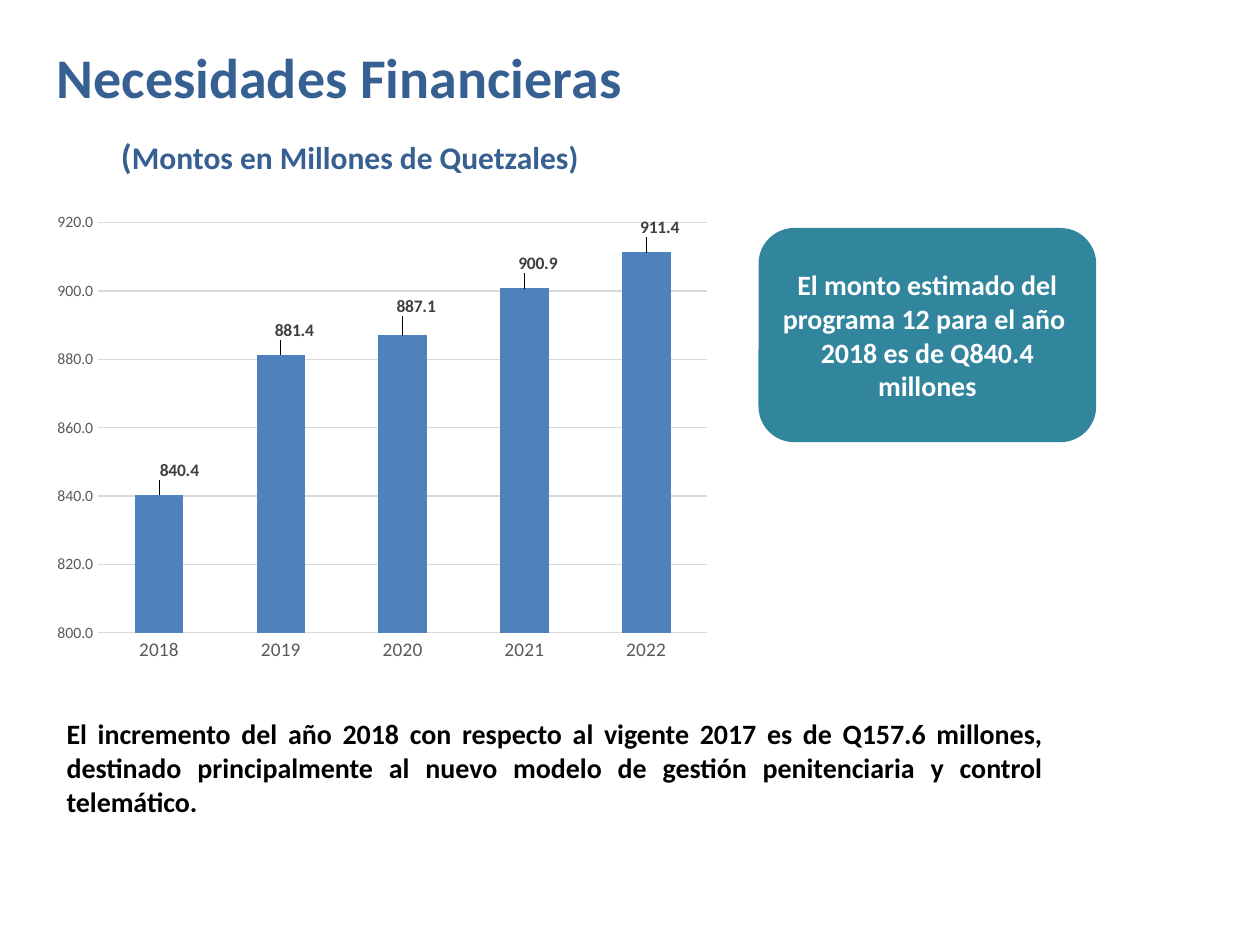
"""Build the financial needs slide with its yearly amounts chart."""
from typing import NamedTuple

import lxml.etree
import pptx
import pptx.chart.data
import pptx.dml.color
import pptx.enum.chart
import pptx.enum.shapes
import pptx.enum.text
import pptx.oxml
import pptx.oxml.ns
import pptx.util

Inches = pptx.util.Inches
Pt = pptx.util.Pt
RGBColor = pptx.dml.color.RGBColor
ALIGN = pptx.enum.text.PP_ALIGN
ANCHOR = pptx.enum.text.MSO_ANCHOR
NAVY = RGBColor(0x37, 0x60, 0x92)
TEAL = RGBColor(0x31, 0x85, 0x9C)
BLUE = RGBColor(0x4F, 0x81, 0xBD)
BLACK = RGBColor(0, 0, 0)
WHITE = RGBColor(0xFF, 0xFF, 0xFF)
DARK = RGBColor(0x40, 0x40, 0x40)
GRAY = RGBColor(0x59, 0x59, 0x59)
LIGHT = RGBColor(0xD9, 0xD9, 0xD9)
FONT = "Calibri"


class Amount(NamedTuple):
    year: str
    value: float
    dx: float
    dy: float


AMOUNTS = [
    Amount("2018", 840.4, 0.03, -0.02),
    Amount("2019", 881.4, 0.02, -0.02),
    Amount("2020", 887.1, 0.02, -0.03),
    Amount("2021", 900.9, 0.02, -0.02),
    Amount("2022", 911.4, 0.02, -0.02),
]


def style(font, size: float, color: RGBColor, bold: bool = False) -> None:
    font.name = FONT
    font.size = Pt(size)
    font.bold = bold
    font.color.rgb = color


def add_run(p, text: str, size: float, color: RGBColor) -> None:
    r = p.add_run()
    r.text = text
    style(r.font, size, color, True)


def make_layout(**values) -> lxml.etree._Element:
    items = "".join(f'<c:{k} val="{v}"/>' for k, v in values.items())
    ns = pptx.oxml.ns.nsdecls("c")
    return pptx.oxml.parse_xml(
        f"<c:layout {ns}><c:manualLayout>{items}</c:manualLayout></c:layout>")


def add_title(s) -> None:
    sp = s.shapes.title
    sp.left, sp.top, sp.width, sp.height = map(Inches, (0.35, 0.21, 5.21, 1.32))
    tf = sp.text_frame
    tf.auto_size = pptx.enum.text.MSO_AUTO_SIZE.NONE
    tf.vertical_anchor = ANCHOR.MIDDLE
    p = tf.paragraphs[0]
    p.alignment = ALIGN.LEFT
    add_run(p, "Necesidades Financieras", 32, NAVY)
    p = tf.add_paragraph()
    p.alignment = ALIGN.LEFT
    p.space_before = Pt(14)
    p._p.get_or_add_pPr().set("marL", str(Inches(0.51)))
    add_run(p, "(", 20, NAVY)
    add_run(p, "Montos en Millones de Quetzales)", 18, NAVY)


def add_note(s) -> None:
    sp = s.shapes.add_textbox(*map(Inches, (0.43, 5.64, 7.95, 0.91)))
    tf = sp.text_frame
    tf.word_wrap = True
    p = tf.paragraphs[0]
    p.alignment = ALIGN.JUSTIFY
    add_run(p, "El incremento del año 2018 con respecto al vigente 2017 es de "
            "Q157.6 millones, destinado principalmente al nuevo modelo de "
            "gestión penitenciaria y control telemático.", 16, BLACK)


def add_callout(s) -> None:
    sp = s.shapes.add_shape(pptx.enum.shapes.MSO_SHAPE.ROUNDED_RECTANGLE,
                            *map(Inches, (6.02, 1.81, 2.68, 1.7)))
    sp.shadow.inherit = False
    sp.fill.solid()
    sp.fill.fore_color.rgb = TEAL
    sp.line.fill.background()
    tf = sp.text_frame
    tf.word_wrap = True
    tf.vertical_anchor = ANCHOR.MIDDLE
    lines = ("El monto estimado del programa 12 para el año ",
             "2018 es de Q840.4 millones")
    for i, text in enumerate(lines):
        p = tf.add_paragraph() if i else tf.paragraphs[0]
        p.alignment = ALIGN.CENTER
        add_run(p, text, 16, WHITE)


def style_axis(axis, size: float) -> None:
    axis.major_tick_mark = pptx.enum.chart.XL_TICK_MARK.NONE
    axis.minor_tick_mark = pptx.enum.chart.XL_TICK_MARK.NONE
    axis.format.line.fill.background()
    style(axis.tick_labels.font, size, GRAY)


def add_amounts_chart(s) -> None:
    data = pptx.chart.data.CategoryChartData(number_format="0.0")
    data.categories = [a.year for a in AMOUNTS]
    data.add_series("Series 1", [a.value for a in AMOUNTS])
    chart = s.shapes.add_chart(pptx.enum.chart.XL_CHART_TYPE.COLUMN_CLUSTERED,
                               *map(Inches, (0.35, 1.62, 5.37, 3.7)), data).chart
    style(chart.font, 10, BLACK)
    chart.has_legend = False
    chart.has_title = False
    style_axis(chart.category_axis, 11)
    axis = chart.value_axis
    style_axis(axis, 9)
    axis.minimum_scale, axis.maximum_scale, axis.major_unit = 800, 920, 20
    axis.tick_labels.number_format = "0.0"
    axis.tick_labels.number_format_is_linked = False
    axis.major_gridlines.format.line.color.rgb = LIGHT
    axis.major_gridlines.format.line.width = Pt(0.75)

    plot = chart.plots[0]
    plot.gap_width = 150
    plot.vary_by_categories = False
    series = plot.series[0]
    series.format.fill.solid()
    series.format.fill.fore_color.rgb = BLUE
    outside = pptx.enum.chart.XL_LABEL_POSITION.OUTSIDE_END
    labels = series.data_labels
    labels.show_value = True
    labels.number_format = "0.0"
    labels.number_format_is_linked = False
    labels.position = outside
    style(labels.font, 10, DARK, True)
    for i, amount in enumerate(AMOUNTS):
        label = series.points[i].data_label
        label.position = outside
        style(label.font, 10, DARK, True)
    root = chart.element
    for idx, amount in zip(root.xpath(".//c:dLbl/c:idx"), AMOUNTS):
        idx.addnext(make_layout(x=amount.dx, y=amount.dy))

    area = root.xpath(".//c:plotArea")[0]
    for old in area.xpath("./c:layout"):
        area.remove(old)
    area.insert(0, make_layout(layoutTarget="inner", xMode="edge", yMode="edge",
                               x=0.08, y=0.04, w=0.9, h=0.88))


def main() -> None:
    prs = pptx.Presentation()
    prs.slide_width, prs.slide_height = Inches(10), Inches(7.5)
    s = prs.slides.add_slide(prs.slide_layouts[5])
    add_title(s)
    add_note(s)
    add_callout(s)
    add_amounts_chart(s)
    prs.save("out.pptx")


if __name__ == "__main__":
    main()
